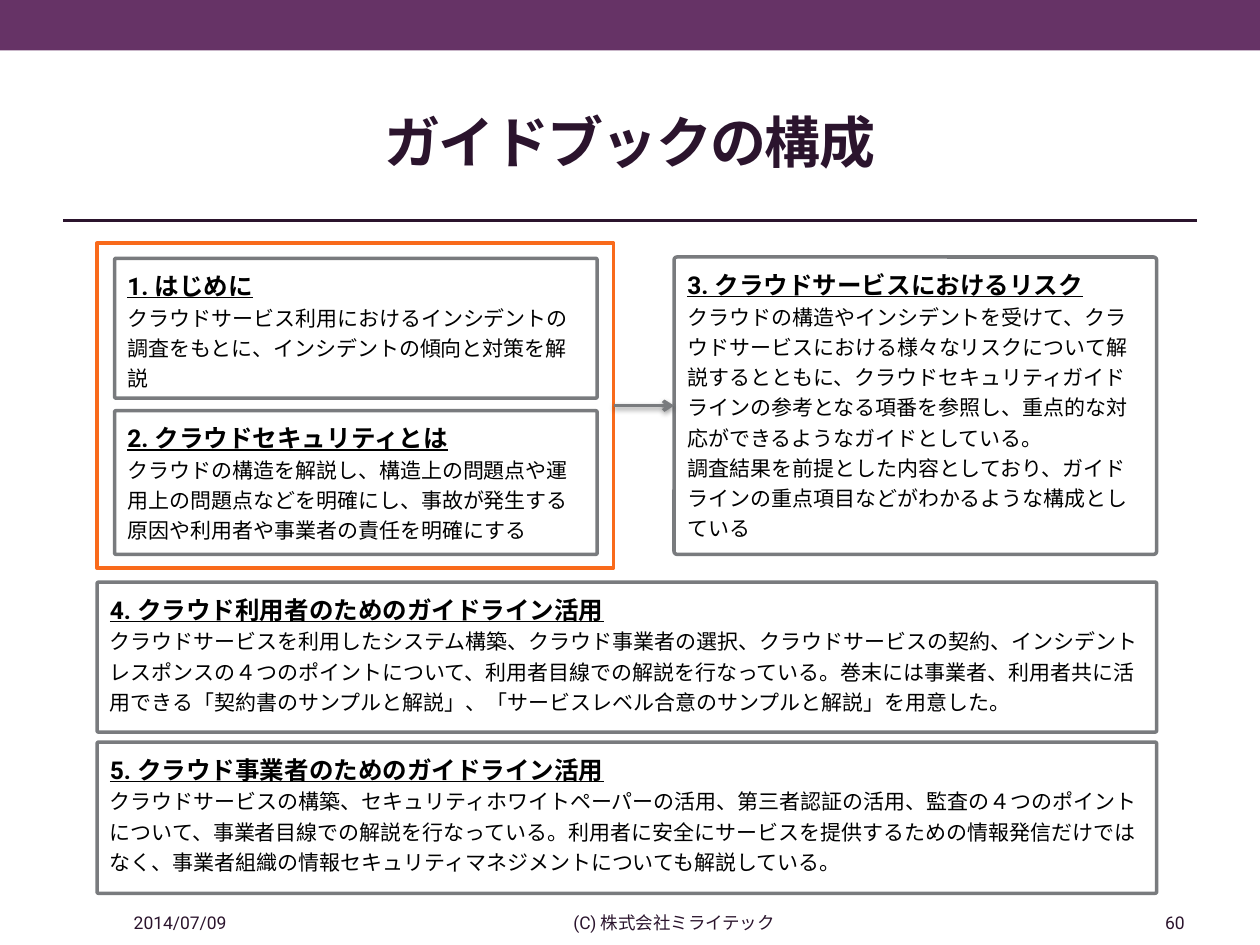
from lxml.etree import SubElement
from pptx import Presentation
from pptx.dml.color import RGBColor
from pptx.enum.shapes import MSO_CONNECTOR as Connector, MSO_SHAPE as Shape
from pptx.enum.text import MSO_ANCHOR as Anchor, PP_ALIGN as Align
from pptx.oxml.ns import qn
from pptx.util import Inches, Pt

PURPLE = RGBColor(0x66, 0x33, 0x66)
DARK = RGBColor(0x2B, 0x14, 0x2D)
GRAY = RGBColor(0x79, 0x7B, 0x7E)
ORANGE = RGBColor(0xF9, 0x6A, 0x1B)
WHITE = RGBColor(0xFF, 0xFF, 0xFF)
BLACK = RGBColor(0, 0, 0)

CHAPTERS = [
    ((0.91, 2.05, 3.83, 1.11), "1. はじめに",
     ["クラウドサービス利用におけるインシデントの調査をもとに、インシデントの傾向と対策を解説"]),
    ((0.91, 3.26, 3.83, 1.14), "2. クラウドセキュリティとは",
     ["クラウドの構造を解説し、構造上の問題点や運用上の問題点などを明確にし、"
      "事故が発生する原因や利用者や事業者の責任を明確にする"]),
    ((5.35, 2.04, 3.83, 2.36), "3. クラウドサービスにおけるリスク",
     ["クラウドの構造やインシデントを受けて、クラウドサービスにおける様々なリスクについて"
      "解説するとともに、クラウドセキュリティガイドラインの参考となる項番を参照し、"
      "重点的な対応ができるようなガイドとしている。",
      "調査結果を前提とした内容としており、ガイドラインの重点項目などがわかるような構成としている"]),
    ((0.77, 4.62, 8.41, 1.19), "4. クラウド利用者のためのガイドライン活用",
     ["クラウドサービスを利用したシステム構築、クラウド事業者の選択、クラウドサービスの契約、"
      "インシデントレスポンスの４つのポイントについて、利用者目線での解説を行なっている。"
      "巻末には事業者、利用者共に活用できる「契約書のサンプルと解説」、"
      "「サービスレベル合意のサンプルと解説」を用意した。"]),
    ((0.77, 5.89, 8.41, 1.2), "5. クラウド事業者のためのガイドライン活用",
     ["クラウドサービスの構築、セキュリティホワイトペーパーの活用、第三者認証の活用、"
      "監査の４つのポイントについて、事業者目線での解説を行なっている。"
      "利用者に安全にサービスを提供するための情報発信だけではなく、"
      "事業者組織の情報セキュリティマネジメントについても解説している。"]),
]
FOOTERS = [
    ((0.5, 7.14, 1.86, 0.36), "2014/07/09", Align.CENTER),
    ((2.45, 7.14, 5.8, 0.36), "(C) 株式会社ミライテック", Align.CENTER),
    ((8.33, 7.14, 1.17, 0.36), "60", Align.RIGHT),
]


def inches(box):
    return [Inches(value) for value in box]


def write(paragraph, text, size, color, font="Roboto", bold=False, underline=False,
          align=Align.LEFT, line_spacing=None, tracking=None):
    paragraph.alignment = align
    if line_spacing:
        paragraph.line_spacing = line_spacing
    run = paragraph.add_run()
    run.text = text
    run.font.size = Pt(size)
    run.font.name = font
    run.font.bold = bold
    run.font.underline = underline
    run.font.color.rgb = color
    properties = run.font._element
    SubElement(properties, qn("a:ea")).set("typeface", font)
    if tracking:
        properties.set("spc", str(int(tracking * 100)))


def add_label(slide, box, text, size, **style):
    frame = slide.shapes.add_textbox(*inches(box)).text_frame
    frame.word_wrap = True
    frame.vertical_anchor = Anchor.MIDDLE
    write(frame.paragraphs[0], text, size, DARK, **style)


def add_box(slide, box, kind=Shape.RECTANGLE, fill=None, line=None):
    shape = slide.shapes.add_shape(kind, *inches(box))
    shape.shadow.inherit = False
    if fill is None:
        shape.fill.background()
    else:
        shape.fill.solid()
        shape.fill.fore_color.rgb = fill
    if line is None:
        shape.line.fill.background()
    else:
        shape.line.color.rgb = line
        shape.line.width = Pt(2)
    return shape


def add_line(slide, start, end, color, width):
    line = slide.shapes.add_connector(Connector.STRAIGHT, *inches(start + end))
    line.line.color.rgb = color
    line.line.width = Pt(width)
    effects = SubElement(line._element.spPr, qn("a:effectLst"))
    return line, effects


def add_header(slide, box):
    left, top, width, height = box
    add_box(slide, (left, top, width, 0.4), fill=PURPLE)
    add_line(slide, (left + 0.5, top + height), (left + width - 0.5, top + height), DARK, 1.5)
    add_label(slide, (left + 0.5, top + 0.58, width - 1, 1.08), "ガイドブックの構成", 32,
              font="Arial", bold=True, align=Align.CENTER, tracking=-1)


def add_chapter(slide, box, heading, body):
    shape = add_box(slide, box, Shape.ROUNDED_RECTANGLE, WHITE, GRAY)
    shape.adjustments[0] = 0.01
    frame = shape.text_frame
    frame.word_wrap = True
    frame.vertical_anchor = Anchor.TOP
    write(frame.paragraphs[0], heading, 14, BLACK, bold=True, underline=True, line_spacing=1.2)
    for text in body:
        write(frame.add_paragraph(), text, 12, BLACK, line_spacing=1.2)
    return shape


def add_arrow(slide, source, target):
    """Join the right side of source to the left side of target, with a soft shadow."""
    arrow, effects = add_line(slide, (0, 0), (1, 1), GRAY, 2)
    arrow.begin_connect(source, 3)
    arrow.end_connect(target, 1)
    SubElement(arrow.line._get_or_add_ln(), qn("a:tailEnd")).set("type", "arrow")
    shadow = SubElement(effects, qn("a:outerShdw"), blurRad=str(Pt(3.1)), dist=str(Pt(1.6)),
                        dir="5400000", rotWithShape="0")
    color = SubElement(shadow, qn("a:srgbClr"), val="000000")
    SubElement(color, qn("a:alpha"), val="38000")


def main():
    presentation = Presentation()
    presentation.slide_width = Inches(10)
    presentation.slide_height = Inches(7.5)
    slide = presentation.slides.add_slide(presentation.slide_layouts[6])

    add_header(slide, (0, 0, 10, 1.75))
    for box, text, align in FOOTERS:
        add_label(slide, box, text, 10, align=align)
    chapters = [add_chapter(slide, *chapter) for chapter in CHAPTERS]
    basics_frame = add_box(slide, (0.77, 1.93, 4.1, 2.58), line=ORANGE)
    add_arrow(slide, basics_frame, chapters[2])

    presentation.save("out.pptx")


if __name__ == "__main__":
    main()
